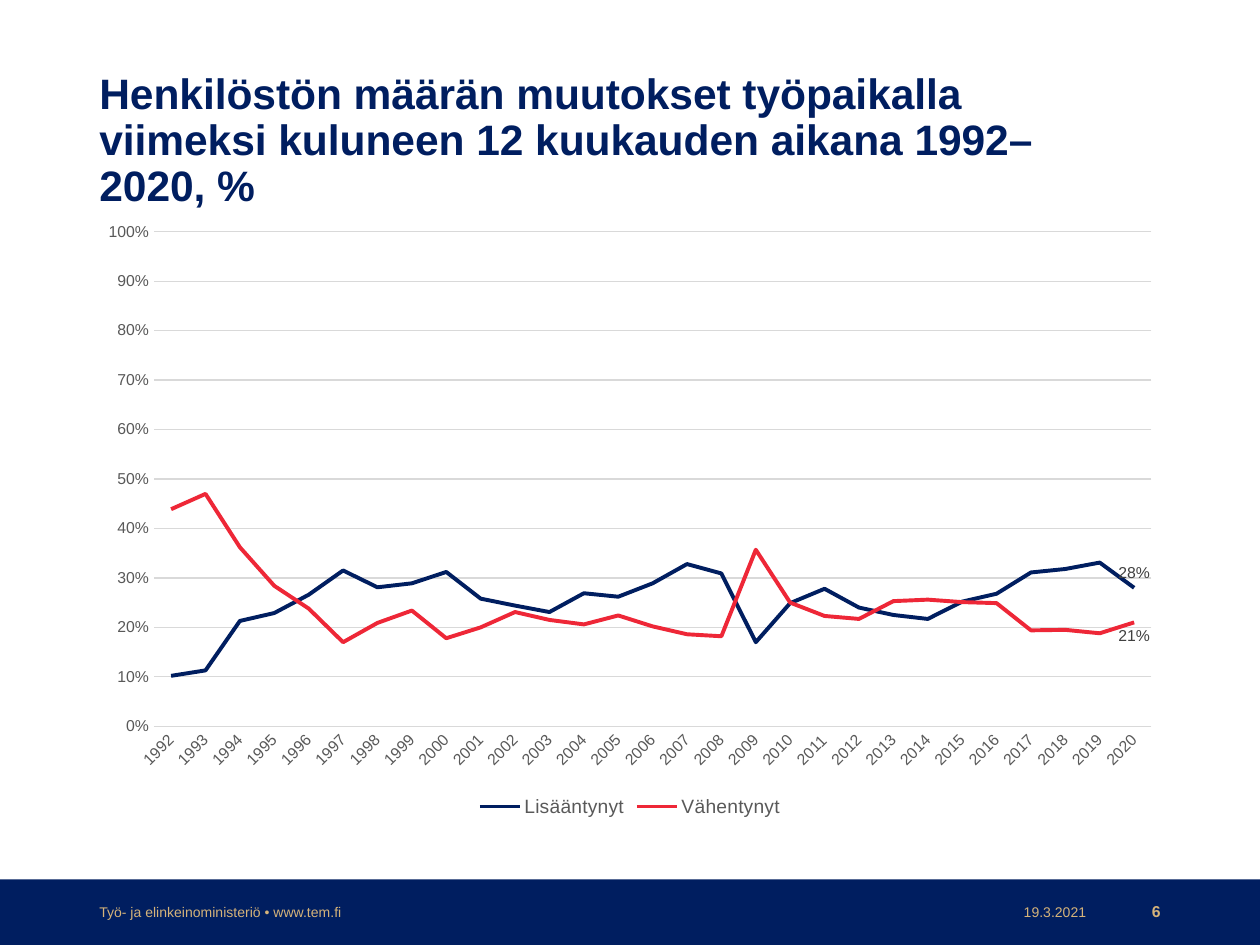
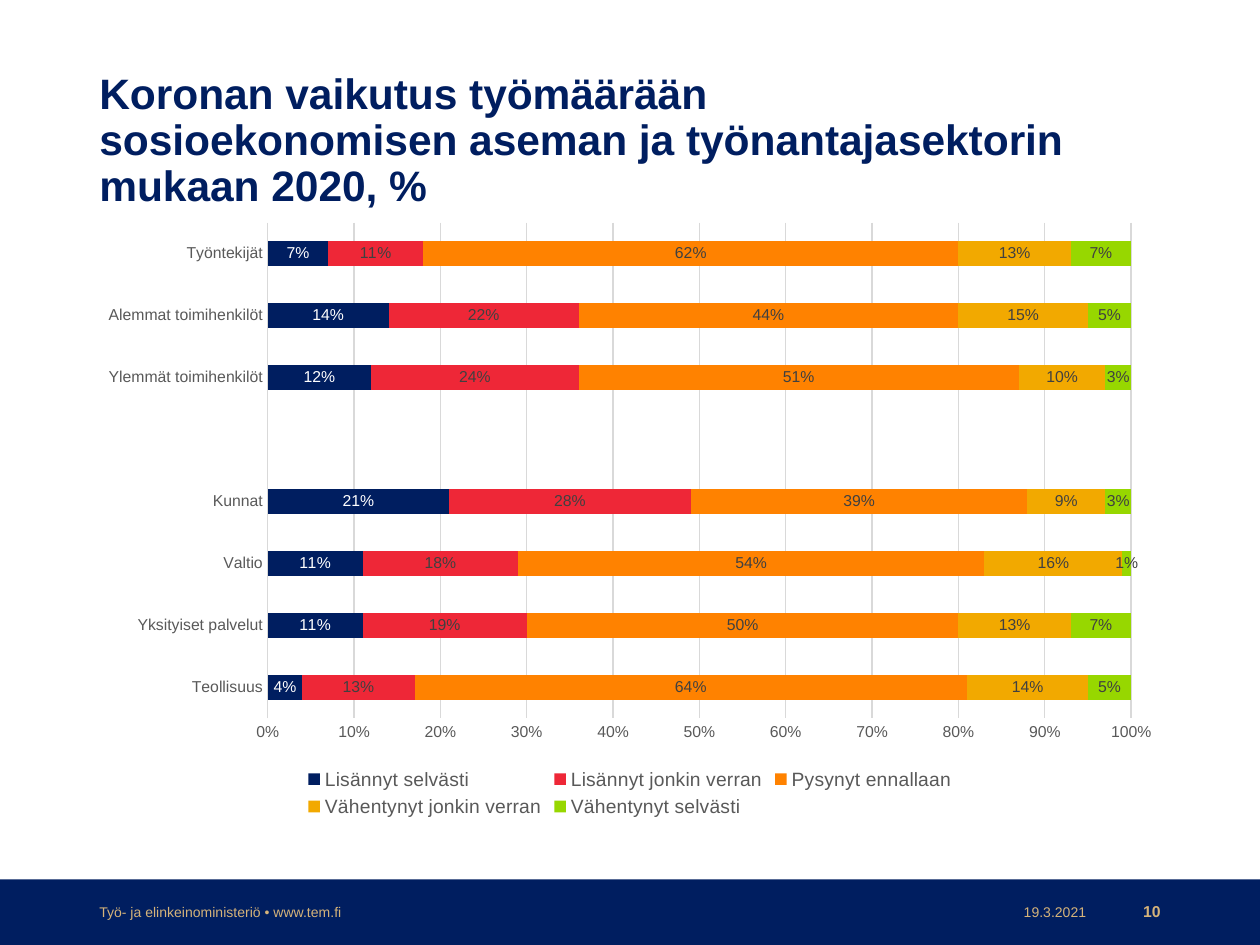
import pptx
import pptx.chart.data
import pptx.dml.color
import pptx.enum.chart
import pptx.enum.shapes
import pptx.enum.text
import pptx.oxml.ns
import pptx.util

Inches = pptx.util.Inches
Pt = pptx.util.Pt
RGBColor = pptx.dml.color.RGBColor
ChartType = pptx.enum.chart.XL_CHART_TYPE
LabelPosition = pptx.enum.chart.XL_LABEL_POSITION
TickMark = pptx.enum.chart.XL_TICK_MARK
Align = pptx.enum.text.PP_ALIGN

NAVY = RGBColor(0x00, 0x1E, 0x60)
RED = RGBColor(0xEE, 0x27, 0x37)
ORANGE = RGBColor(0xFF, 0x82, 0x00)
AMBER = RGBColor(0xF2, 0xA9, 0x00)
GREEN = RGBColor(0x97, 0xD7, 0x00)
GOLD = RGBColor(0xD5, 0xB3, 0x7A)
WHITE = RGBColor(0xFF, 0xFF, 0xFF)
BLACK = RGBColor(0x00, 0x00, 0x00)
DARK_GRAY = RGBColor(0x40, 0x40, 0x40)
GRAY = RGBColor(0x59, 0x59, 0x59)
LIGHT_GRAY = RGBColor(0xD9, 0xD9, 0xD9)

FONT_NAME = "Arial"
TITLE_FONT = {"size": Pt(24.3), "bold": True, "color": NAVY}
FOOTER_FONT = {"size": Pt(8), "bold": False, "color": GOLD}
NUMBER_FONT = {"size": Pt(9), "bold": True, "color": GOLD}
CHART_FONT = {"size": Pt(10), "color": BLACK}
AXIS_FONT = {"size": Pt(9), "color": GRAY}
LEGEND_FONT = {"size": Pt(11), "color": GRAY}
LABEL_FONT = {"size": Pt(9), "color": DARK_GRAY}
LIGHT_LABEL_FONT = {"size": Pt(9), "color": WHITE}
THIN_LINE = {"width": Pt(0.75), "color": LIGHT_GRAY}

LEFT_MARGIN = 0.69
CONTENT_WIDTH = 8.62
FOOTER_TOP, FOOTER_HEIGHT = 7.12, 0.23
FOOTER_TEXT = "Työ- ja elinkeinoministeriö •\u00a0www.tem.fi"
DATE_TEXT = "19.3.2021"

YEARS = [str(year) for year in range(1992, 2021)]
STAFF_CHANGES = [
    ("Lisääntynyt", NAVY, LabelPosition.ABOVE, [
        0.102, 0.113, 0.213, 0.229, 0.266, 0.315, 0.281, 0.289, 0.312, 0.258,
        0.244, 0.231, 0.269, 0.262, 0.289, 0.328, 0.309, 0.170, 0.249, 0.278,
        0.240, 0.225, 0.217, 0.252, 0.268, 0.311, 0.318, 0.331, 0.28]),
    ("Vähentynyt", RED, LabelPosition.BELOW, [
        0.439, 0.470, 0.362, 0.284, 0.238, 0.170, 0.209, 0.234, 0.178, 0.200,
        0.231, 0.215, 0.206, 0.224, 0.202, 0.186, 0.182, 0.357, 0.25, 0.223,
        0.217, 0.253, 0.256, 0.251, 0.249, 0.194, 0.195, 0.188, 0.21]),
]

GROUPS = ["Teollisuus", "Yksityiset palvelut", "Valtio", "Kunnat", "",
          "Ylemmät toimihenkilöt", "Alemmat toimihenkilöt", "Työntekijät"]
WORKLOAD_EFFECTS = [
    ("Lisännyt selvästi", NAVY, LIGHT_LABEL_FONT,
     [0.04, 0.11, 0.11, 0.21, None, 0.12, 0.14, 0.07]),
    ("Lisännyt jonkin verran", RED, LABEL_FONT,
     [0.13, 0.19, 0.18, 0.28, None, 0.24, 0.22, 0.11]),
    ("Pysynyt ennallaan", ORANGE, LABEL_FONT,
     [0.64, 0.5, 0.54, 0.39, None, 0.51, 0.44, 0.62]),
    ("Vähentynyt jonkin verran", AMBER, LABEL_FONT,
     [0.14, 0.13, 0.16, 0.09, None, 0.1, 0.15, 0.13]),
    ("Vähentynyt selvästi", GREEN, LABEL_FONT,
     [0.05, 0.07, 0.01, 0.03, None, 0.03, 0.05, 0.07]),
]


def apply_format(target, values):
    """Set the format values on a font or a line."""
    for name, value in values.items():
        if name == "color":
            target.color.rgb = value
        else:
            setattr(target, name, value)


def format_font(font, values):
    apply_format(font, {"name": FONT_NAME, **values})


def add_text(slide, box, text, font_values, alignment=Align.LEFT, line_spacing=None):
    text_box = slide.shapes.add_textbox(*map(Inches, box))
    frame = text_box.text_frame
    frame.word_wrap = True
    frame.vertical_anchor = pptx.enum.text.MSO_ANCHOR.MIDDLE
    paragraph = frame.paragraphs[0]
    paragraph.alignment = alignment
    paragraph.line_spacing = line_spacing
    run = paragraph.add_run()
    run.text = text
    format_font(run.font, font_values)


def add_footer(slide, number):
    band = slide.shapes.add_shape(
        pptx.enum.shapes.MSO_SHAPE.RECTANGLE,
        Inches(0), Inches(6.98), Inches(10), Inches(0.52))
    band.shadow.inherit = False
    band.fill.solid()
    band.fill.fore_color.rgb = NAVY
    band.line.fill.background()
    for left, width, text, font_values, alignment in (
            (8.72, 0.59, str(number), NUMBER_FONT, Align.RIGHT),
            (7.95, 0.77, DATE_TEXT, FOOTER_FONT, Align.RIGHT),
            (LEFT_MARGIN, 3.37, FOOTER_TEXT, FOOTER_FONT, Align.LEFT)):
        add_text(slide, (left, FOOTER_TOP, width, FOOTER_HEIGHT),
                 text, font_values, alignment)


def add_content_slide(presentation, title, number):
    slide = presentation.slides.add_slide(presentation.slide_layouts[6])
    add_footer(slide, number)
    add_text(slide, (LEFT_MARGIN, 0.58, 7.88, 1.09), title, TITLE_FONT, line_spacing=0.9)
    return slide


def format_axes(chart):
    for axis in (chart.category_axis, chart.value_axis):
        axis.major_tick_mark = axis.minor_tick_mark = TickMark.NONE
        format_font(axis.tick_labels.font, AXIS_FONT)
    apply_format(chart.category_axis.format.line, THIN_LINE)
    value_axis = chart.value_axis
    apply_format(value_axis, {"minimum_scale": 0, "maximum_scale": 1,
                              "major_unit": 0.1, "has_major_gridlines": True})
    apply_format(value_axis.tick_labels,
                 {"number_format": "0%", "number_format_is_linked": False})
    value_axis.format.line.fill.background()
    apply_format(value_axis.major_gridlines.format.line, THIN_LINE)


def add_percent_chart(slide, chart_type, categories, series_rows):
    """Add a chart with a 0–100 % value axis and a legend below it."""
    data = pptx.chart.data.CategoryChartData(number_format="0%")
    data.categories = categories
    for name, *_, values in series_rows:
        data.add_series(name, values)
    box = map(Inches, (LEFT_MARGIN, 1.67, CONTENT_WIDTH, 4.86))
    chart = slide.shapes.add_chart(chart_type, *box, data).chart
    apply_format(chart, {"has_title": False, "has_legend": True})
    format_font(chart.font, CHART_FONT)
    apply_format(chart.legend, {
        "position": pptx.enum.chart.XL_LEGEND_POSITION.BOTTOM,
        "include_in_layout": False})
    format_font(chart.legend.font, LEGEND_FONT)
    chart.plots[0].vary_by_categories = False
    format_axes(chart)
    return chart


def add_staff_chart(slide):
    chart = add_percent_chart(slide, ChartType.LINE, YEARS, STAFF_CHANGES)
    axis_text = chart.category_axis._element.find(".//" + pptx.oxml.ns.qn("a:bodyPr"))
    axis_text.set("rot", "-2700000")
    for series, (_, color, position, values) in zip(chart.series, STAFF_CHANGES):
        series.smooth = False
        series.marker.style = pptx.enum.chart.XL_MARKER_STYLE.NONE
        apply_format(series.format.line, {"width": Pt(2.25), "color": color})
        last_label = series.points[len(values) - 1].data_label
        format_font(last_label.font, LABEL_FONT)
        last_label.position = position


def add_workload_chart(slide):
    chart = add_percent_chart(slide, ChartType.BAR_STACKED, GROUPS, WORKLOAD_EFFECTS)
    apply_format(chart.plots[0], {"gap_width": 150, "overlap": 100})
    for series, (_, color, label_font, _) in zip(chart.series, WORKLOAD_EFFECTS):
        series.format.fill.solid()
        series.format.fill.fore_color.rgb = color
        labels = series.data_labels
        apply_format(labels, {
            "show_value": True, "position": LabelPosition.CENTER,
            "number_format": "0%", "number_format_is_linked": False})
        format_font(labels.font, label_font)


def main():
    presentation = pptx.Presentation()
    presentation.slide_width = Inches(10)
    presentation.slide_height = Inches(7.5)
    add_staff_chart(add_content_slide(
        presentation,
        "Henkilöstön määrän muutokset työpaikalla viimeksi kuluneen "
        "12 kuukauden aikana 1992–2020, %", 6))
    add_workload_chart(add_content_slide(
        presentation,
        "Koronan vaikutus työmäärään sosioekonomisen aseman ja "
        "työnantajasektorin mukaan 2020, %", 10))
    presentation.save("out.pptx")


if __name__ == "__main__":
    main()
